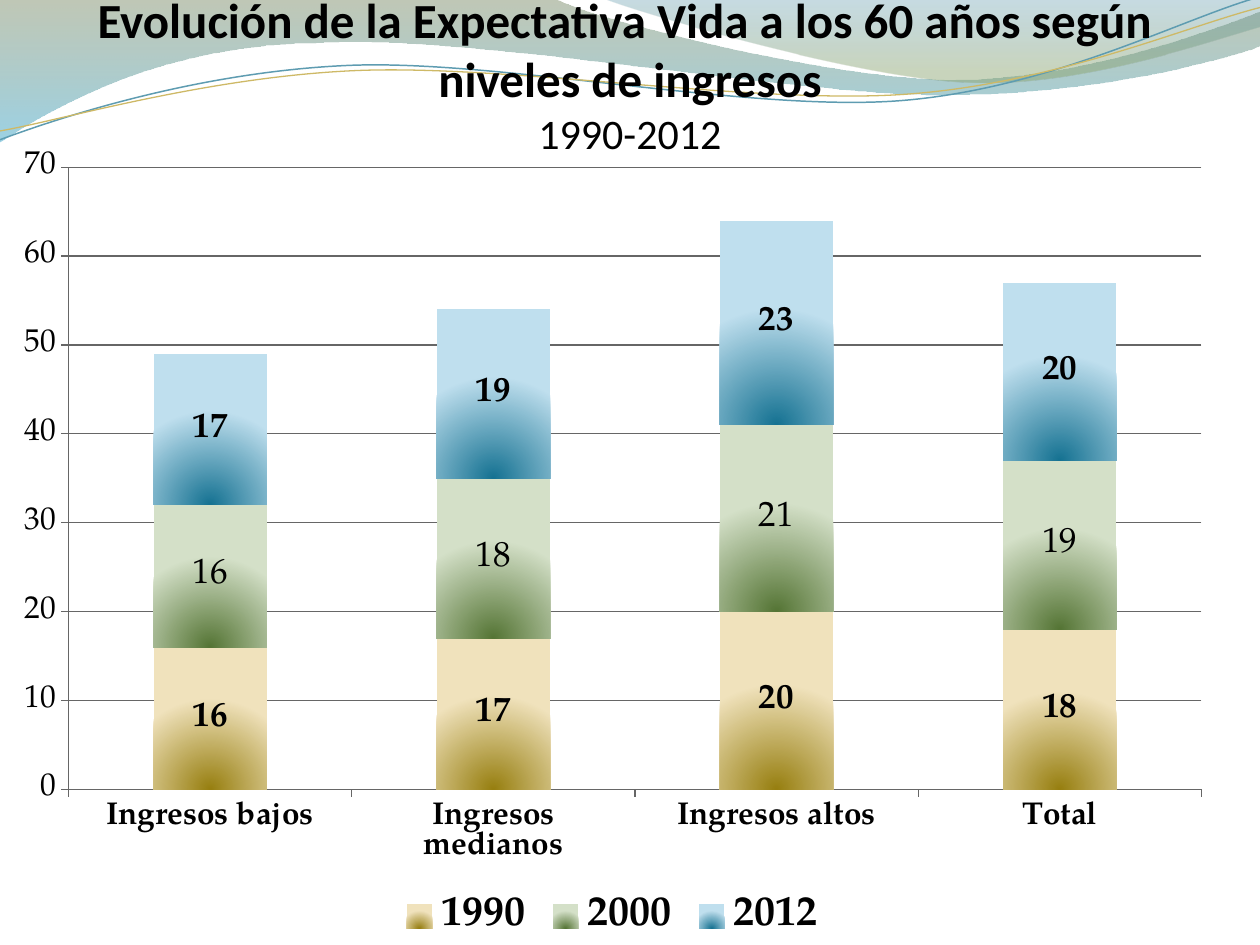
import math

import lxml.etree
import pptx
import pptx.chart.data
import pptx.dml.color
import pptx.enum.chart
import pptx.enum.text
import pptx.oxml
import pptx.oxml.ns
import pptx.util

Inches = pptx.util.Inches
Pt = pptx.util.Pt
RGBColor = pptx.dml.color.RGBColor
qn = pptx.oxml.ns.qn

BLACK = RGBColor(0x00, 0x00, 0x00)
GRID_GRAY = RGBColor(0x66, 0x66, 0x66)
OLIVE = RGBColor(0x74, 0x85, 0x5E)
SKY = RGBColor(0x4A, 0xAC, 0xCE)
TEAL = RGBColor(0x45, 0x88, 0x9F)
SAGE = RGBColor(0x8A, 0xA3, 0x6D)
LINE_BLUE = RGBColor(0x5E, 0x9C, 0xB1)
LINE_GOLD = RGBColor(0xCE, 0xB9, 0x66)
GOLD_DARK, GOLD_LIGHT = RGBColor(0x97, 0x7F, 0x10), RGBColor(0xF0, 0xE2, 0xBC)
GREEN_DARK, GREEN_LIGHT = RGBColor(0x55, 0x75, 0x35), RGBColor(0xD4, 0xE0, 0xC8)
BLUE_DARK, BLUE_LIGHT = RGBColor(0x15, 0x72, 0x92), RGBColor(0xBF, 0xDF, 0xEE)
CHART_FONT = "TeX Gyre Pagella"
A_NS = "http://schemas.openxmlformats.org/drawingml/2006/main"
UNITS = 1000


def add_wave(box, segments, closed, rotation=0):
    left, top, width, height = box
    builder = slide.shapes.build_freeform(0, 0, scale=Inches(1) / UNITS)
    builder.add_line_segments([(width * UNITS, height * UNITS)], close=closed)
    wave = builder.convert_to_shape()
    wave.shadow.inherit = False
    wave.left, wave.top, wave.width, wave.height = map(Inches, box)
    wave.rotation = rotation
    outline = wave.element.spPr.find(".//" + qn("a:path"))
    outline.set("w", str(round(width * UNITS)))
    outline.set("h", str(round(height * UNITS)))
    for step in list(outline):
        outline.remove(step)
    cosine = math.cos(math.radians(-rotation))
    sine = math.sin(math.radians(-rotation))
    for index, segment in enumerate(segments):
        tag = "moveTo" if index == 0 else "lnTo" if len(segment) == 2 else "cubicBezTo"
        step = lxml.etree.SubElement(outline, qn(f"a:{tag}"))
        for x, y in zip(segment[::2], segment[1::2]):
            dx, dy = x - left - width / 2, y - top - height / 2
            point = lxml.etree.SubElement(step, qn("a:pt"))
            point.set("x", str(round((dx * cosine - dy * sine + width / 2) * UNITS)))
            point.set("y", str(round((dx * sine + dy * cosine + height / 2) * UNITS)))
    if closed:
        lxml.etree.SubElement(outline, qn("a:close"))
    return wave


def set_gradient(properties, stops, direction):
    stop_xml = "".join(
        f'<a:gs pos="{position * 1000}"><a:srgbClr val="{color}">'
        f'<a:alpha val="{alpha * 1000}"/></a:srgbClr></a:gs>'
        for position, color, alpha in stops
    )
    gradient = pptx.oxml.parse_xml(
        f'<a:gradFill xmlns:a="{A_NS}" rotWithShape="1">'
        f"<a:gsLst>{stop_xml}</a:gsLst>{direction}</a:gradFill>"
    )
    properties.replace(properties.find(qn("a:solidFill")), gradient)


presentation = pptx.Presentation()
presentation.slide_width = Inches(10)
presentation.slide_height = Inches(7.5)
slide = presentation.slides.add_slide(presentation.slide_layouts[5])

bands = [
    ((-0.01, -0.01, 10.02, 1.14),
     [(0, -0.01), (4.4, -0.01), (4.76, 0.17, 6.64, 0.63, 7.58, 0.63),
      (8.53, 0.63, 9.58, 0.26, 10, 0.09), (10.01, 0.36),
      (9.83, 0.44, 8.7, 0.76, 7.46, 0.75), (6.22, 0.75, 3.82, 0.28, 2.57, 0.34),
      (1.29, 0.35, 0.46, 0.83, -0.01, 1.13), (0, -0.01)],
     [(0, OLIVE, 45), (100, SKY, 55)]),
    ((4.79, -0.01, 5.21, 0.7),
     [(4.79, -0.01), (5.09, 0.11, 6.82, 0.62, 7.69, 0.65),
      (8.56, 0.69, 9.61, 0.32, 10, 0.21), (10, 0), (4.79, -0.01)],
     [(0, TEAL, 30), (80, SAGE, 45)]),
]
for box, segments, stops in bands:
    band = add_wave(box, segments, True)
    band.line.fill.background()
    band.fill.solid()
    band.fill.fore_color.rgb = stops[0][1]
    set_gradient(band.element.spPr, stops, '<a:lin ang="5400000" scaled="1"/>')

strands = [
    ((-0.02, 0.22, 10.02, 0.71),
     [(0, 1.11), (0.48, 0.93, 1.58, 0.57, 2.77, 0.52),
      (3.95, 0.47, 5.93, 0.89, 7.13, 0.8), (8.33, 0.71, 9.38, 0.15, 9.98, -0.02)],
     LINE_BLUE, 0.85),
    ((-0.02, 0.3, 10.03, 0.58),
     [(0, 1.04), (0.47, 0.96, 1.64, 0.61, 2.83, 0.56),
      (4.03, 0.51, 5.97, 0.83, 7.17, 0.75), (8.36, 0.67, 9.41, 0.21, 10, 0.06)],
     LINE_GOLD, 0.75),
]
for box, segments, color, width in strands:
    strand = add_wave(box, segments, False, rotation=357.3)
    strand.fill.background()
    strand.line.color.rgb = color
    strand.line.width = Pt(width)

title = slide.shapes.title
title.element.getparent().append(title.element)
title.left, title.top = Inches(0), Inches(0)
title.width, title.height = Inches(10), Inches(1.25)
heading = title.text_frame
heading.margin_left = heading.margin_right = heading.margin_bottom = Inches(0)
heading.margin_top = Inches(0.05)
heading.vertical_anchor = pptx.enum.text.MSO_ANCHOR.BOTTOM
heading.word_wrap = True
heading.text = (
    "Evolución de la Expectativa Vida a los 60 años según \v"
    "niveles de ingresos\v1990-2012"
)
heading.paragraphs[0].alignment = pptx.enum.text.PP_ALIGN.CENTER
for run, size, bold in zip(heading.paragraphs[0].runs, (28, 28, 24), (True, True, False)):
    run.font.name = "Calibri"
    run.font.size = Pt(size)
    run.font.bold = bold
    run.font.color.rgb = BLACK

income_data = pptx.chart.data.CategoryChartData()
income_data.categories = ["Ingresos bajos", "Ingresos medianos", "Ingresos altos", "Total"]
income_data.add_series("1990", (16, 17, 20, 18))
income_data.add_series("2000", (16, 18, 21, 19))
income_data.add_series("2012", (17, 19, 23, 20))
chart = slide.shapes.add_chart(
    pptx.enum.chart.XL_CHART_TYPE.COLUMN_STACKED,
    Inches(0), Inches(1.07), Inches(9.72), Inches(6.43), income_data,
).chart
chart.has_title = False
chart.font.name = CHART_FONT
chart.font.size = Pt(18)
chart.font.color.rgb = BLACK

chart.has_legend = True
chart.legend.position = pptx.enum.chart.XL_LEGEND_POSITION.BOTTOM
chart.legend.include_in_layout = False
chart.legend.font.name = CHART_FONT
chart.legend.font.size = Pt(24)
chart.legend.font.bold = True

levels = chart.category_axis
years = chart.value_axis
levels.tick_labels.font.bold = True
levels.tick_labels.font.size = Pt(18)
years.has_major_gridlines = True
for axis_line in (levels.format.line, years.format.line, years.major_gridlines.format.line):
    axis_line.color.rgb = GRID_GRAY
    axis_line.width = Pt(0.75)

plot = chart.plots[0]
plot.gap_width = 150
plot.overlap = 100
plot.vary_by_categories = False
bar_looks = [
    (GOLD_DARK, GOLD_LIGHT, True),
    (GREEN_DARK, GREEN_LIGHT, False),
    (BLUE_DARK, BLUE_LIGHT, True),
]
for series, (dark, light, bold) in zip(plot.series, bar_looks):
    series.format.fill.solid()
    series.format.fill.fore_color.rgb = dark
    set_gradient(
        series._element.spPr, [(0, dark, 100), (100, light, 100)],
        '<a:path path="circle"><a:fillToRect l="50000" t="100000" r="50000" b="0"/></a:path>',
    )
    labels = series.data_labels
    labels.show_value = True
    labels.font.name = CHART_FONT
    labels.font.size = Pt(20)
    labels.font.bold = bold
    labels.font.color.rgb = BLACK

plot_area = chart._chartSpace.chart.plotArea
for old_layout in plot_area.findall(qn("c:layout")):
    plot_area.remove(old_layout)
layout = lxml.etree.Element(qn("c:layout"))
manual = lxml.etree.SubElement(layout, qn("c:manualLayout"))
for tag, value in (("layoutTarget", "inner"), ("xMode", "edge"), ("yMode", "edge"),
                   ("x", "0.056"), ("y", "0.04"), ("w", "0.925"), ("h", "0.768")):
    lxml.etree.SubElement(manual, qn(f"c:{tag}")).set("val", value)
plot_area.insert(0, layout)

presentation.save("out.pptx")
